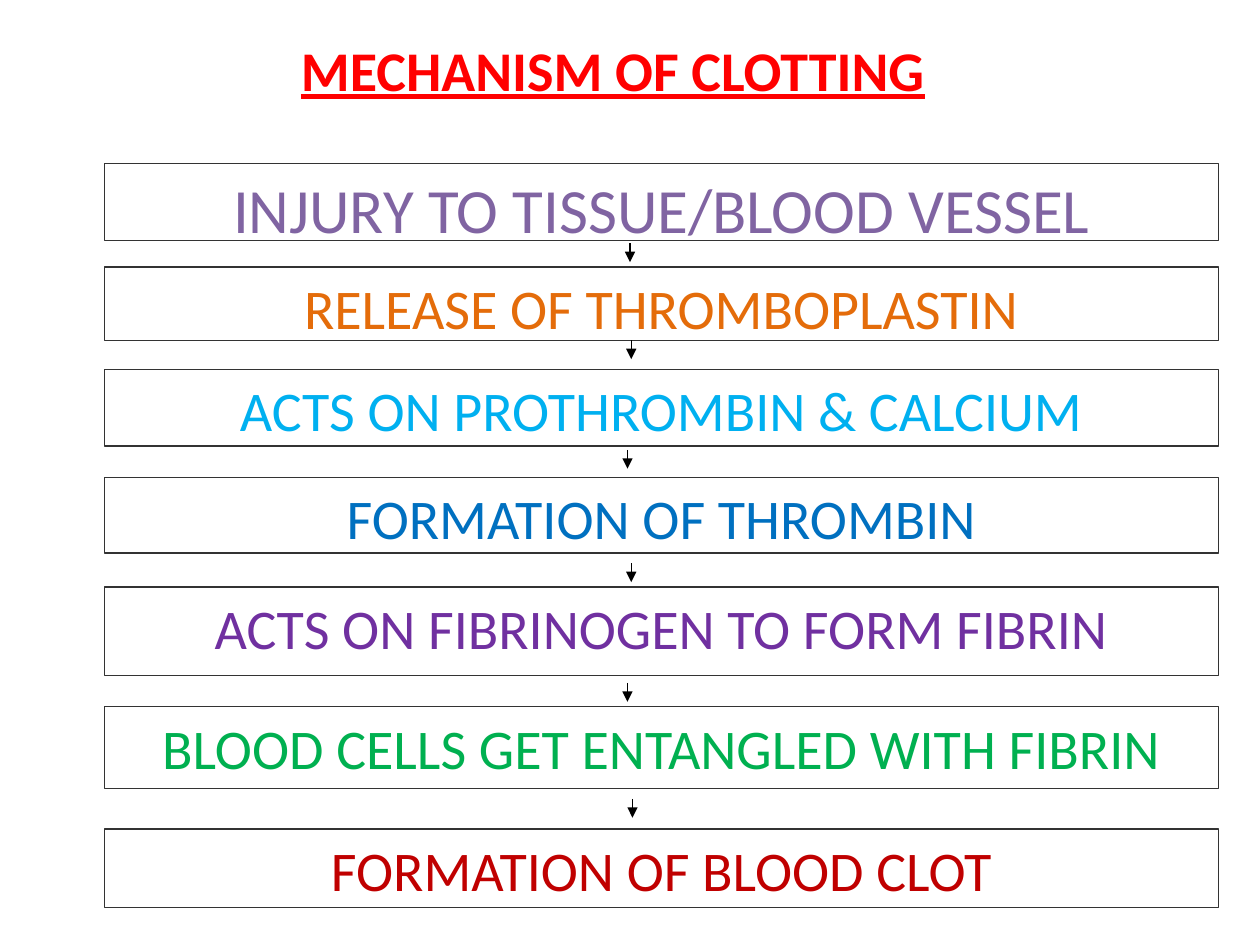
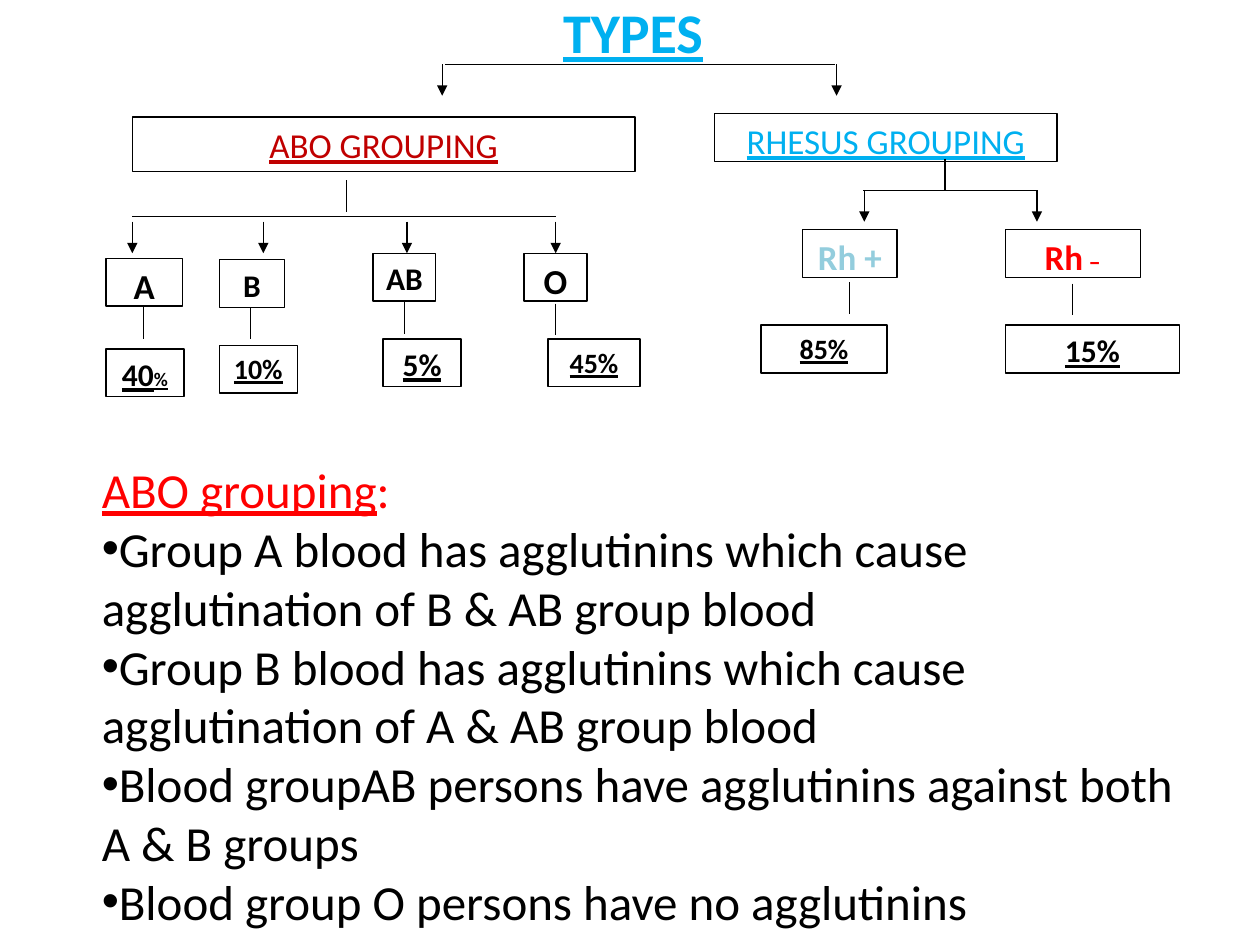
from pptx import Presentation
from pptx.dml.color import RGBColor
from pptx.enum.shapes import MSO_CONNECTOR, MSO_SHAPE
from pptx.enum.text import MSO_ANCHOR, PP_ALIGN
from pptx.oxml.ns import qn
from pptx.util import Inches, Pt
from lxml import etree

RECT = MSO_SHAPE.RECTANGLE
LINE = MSO_CONNECTOR.STRAIGHT
CENTER, LEFT = PP_ALIGN.CENTER, PP_ALIGN.LEFT
TOP, MIDDLE = MSO_ANCHOR.TOP, MSO_ANCHOR.MIDDLE

FONT = "Calibri"
BLACK = RGBColor(0x00, 0x00, 0x00)
WHITE = RGBColor(0xFF, 0xFF, 0xFF)
GREY = RGBColor(0x33, 0x33, 0x33)
RED = RGBColor(0xFF, 0x00, 0x00)
CRIMSON = RGBColor(0xC0, 0x00, 0x00)
ORANGE = RGBColor(0xE4, 0x6C, 0x0A)
GREEN = RGBColor(0x00, 0xB0, 0x50)
SKY = RGBColor(0x00, 0xB0, 0xF0)
BLUE = RGBColor(0x00, 0x70, 0xC0)
PALE = RGBColor(0x93, 0xCD, 0xDD)
MAUVE = RGBColor(0x80, 0x64, 0xA2)
PURPLE = RGBColor(0x70, 0x30, 0xA0)

BOLD = {"bold": True}
UNDER = {"underline": True}
STRONG = {**BOLD, **UNDER}

# Clotting steps: text, colour, size, top, height
STEPS = [
    ("INJURY TO TISSUE/BLOOD VESSEL", MAUVE, 36, 1.3, 0.61),
    ("RELEASE OF THROMBOPLASTIN", ORANGE, 32, 2.12, 0.58),
    ("ACTS ON PROTHROMBIN & CALCIUM", SKY, 32, 2.93, 0.61),
    ("FORMATION OF THROMBIN", BLUE, 32, 3.79, 0.6),
    ("ACTS ON FIBRINOGEN TO FORM FIBRIN", PURPLE, 32, 4.66, 0.7),
    ("BLOOD CELLS GET ENTANGLED WITH FIBRIN", GREEN, 32, 5.61, 0.65),
    ("FORMATION OF BLOOD CLOT", CRIMSON, 32, 6.58, 0.62),
]
# Arrows between the steps: x, top
STEP_ARROWS = [(5, 1.93), (5.01, 2.7), (4.98, 3.57),
               (5.01, 4.47), (4.98, 5.42), (5.02, 6.34)]

# Blood groups: runs of (text, size), colour, left, top, width
GROUPS = [
    ([("A", 20)], BLACK, 0.84, 2.05, 0.61),
    ([("B", 18)], BLACK, 1.74, 2.06, 0.52),
    ([("AB", 18)], BLACK, 2.96, 2.01, 0.5),
    ([("O", 20)], BLACK, 4.16, 2.01, 0.5),
    ([("Rh +", 20)], PALE, 6.37, 1.82, 0.75),
    ([("Rh", 20), (" –", 14)], RED, 7.98, 1.82, 1.07),
]
# Share of each group: runs of (text, size), left, top, width
SHARES = [
    ([("40", 18), ("%", 11)], 0.84, 2.77, 0.62),
    ([("10%", 16)], 1.74, 2.74, 0.62),
    ([("5%", 18)], 3.04, 2.69, 0.62),
    ([("45%", 16)], 4.35, 2.69, 0.73),
    ([("85%", 16)], 6.04, 2.58, 1),
    ([("15%", 18)], 7.98, 2.58, 1.38),
]
BARS = [(3.53, 6.63, 0.51), (1.05, 4.41, 1.72), (6.85, 8.22, 1.51)]
# Vertical lines: x, top
ARROWS = [(3.51, 0.51), (6.64, 0.51), (1.05, 1.76), (2.09, 1.76),
          (3.23, 1.76), (4.41, 1.76), (6.86, 1.51), (8.23, 1.51)]
STEMS = [(2.75, 1.43), (7.5, 1.26), (1.14, 2.44), (1.99, 2.44),
         (3.21, 2.4), (4.41, 2.41), (6.74, 2.24), (8.51, 2.25)]
DROP = 0.25

FACTS = [
    "Group A blood has agglutinins which cause agglutination of B & AB group blood",
    "Group B blood has agglutinins which cause agglutination of A & AB group blood",
    "Blood groupAB persons have agglutinins against both A & B groups",
    "Blood group O persons have no agglutinins",
]


def add_run(para, text, size, color, style):
    run = para.add_run()
    run.text = text
    run.font.color.rgb = color
    for key, value in {"name": FONT, "size": Pt(size), **style}.items():
        setattr(run.font, key, value)


def set_frame(shape, anchor):
    frame = shape.text_frame
    frame.word_wrap = True
    frame.vertical_anchor = anchor
    return frame


def add_box(slide, area, runs, color, style, edge=BLACK):
    """Outlined box with centred runs of (text, size)."""
    box = slide.shapes.add_shape(RECT, *map(Inches, area))
    box.shadow.inherit = False
    box.fill.solid()
    box.fill.fore_color.rgb = WHITE
    box.line.color.rgb = edge
    box.line.width = Pt(0.75)
    para = set_frame(box, TOP).paragraphs[0]
    para.alignment = CENTER
    for text, size in runs:
        add_run(para, text, size, color, style)


def add_text(slide, area, anchor):
    return set_frame(slide.shapes.add_textbox(*map(Inches, area)), anchor)


def add_title(slide, area, text, color, align, anchor):
    para = add_text(slide, area, anchor).paragraphs[0]
    para.alignment = align
    add_run(para, text, 32, color, STRONG)
    return para


def add_line(slide, start, end, arrow=False):
    line = slide.shapes.add_connector(LINE, *map(Inches, (*start, *end)))
    line.line.color.rgb = BLACK
    line.line.width = Pt(0.75)
    if arrow:
        etree.SubElement(line.line._get_or_add_ln(), qn("a:tailEnd"), type="triangle")
    etree.SubElement(line._element.spPr, qn("a:effectLst"))


def add_drops(slide, spots, length, arrow):
    """Vertical lines of one length, each from (x, top)."""
    for x, top in spots:
        add_line(slide, (x, top), (x, top + length), arrow)


def add_bullet(para):
    props = para._p.get_or_add_pPr()
    props.set("marL", "0")
    props.set("indent", "0")
    etree.SubElement(props, qn("a:buFont"), typeface="Arial")
    etree.SubElement(props, qn("a:buChar"), char="•")


def draw_clotting(slide):
    para = add_title(slide, (0.52, 0.15, 7.36, 0.68), "MECHANISM OF CLOTTING", RED, LEFT, TOP)
    para.line_spacing = 1.15
    para._p.get_or_add_pPr().set("marL", str(Inches(1.77)))
    for text, color, size, top, height in STEPS:
        add_box(slide, (0.83, top, 8.84, height), [(text, size)], color, {}, GREY)
    add_drops(slide, STEP_ARROWS, 0.15, True)


def draw_types(slide):
    add_box(slide, (1.05, 0.93, 3.99, 0.43), [("ABO GROUPING", 20)], CRIMSON, UNDER)
    add_box(slide, (5.67, 0.9, 2.72, 0.38), [("RHESUS GROUPING", 20)], SKY, UNDER)
    for runs, color, *spot in GROUPS:
        add_box(slide, (*spot, 0.38), runs, color, BOLD)
    for runs, *spot in SHARES:
        add_box(slide, (*spot, 0.38), runs, BLACK, STRONG)
    for left, right, y in BARS:
        add_line(slide, (left, y), (right, y))
    add_drops(slide, ARROWS, DROP, True)
    add_drops(slide, STEMS, DROP, False)
    add_title(slide, (1.29, -0.07, 7.47, 0.64), "TYPES", SKY, CENTER, MIDDLE)

    frame = add_text(slide, (0.71, 3.58, 8.97, 3.87), MIDDLE)
    head = frame.paragraphs[0]
    add_run(head, "ABO grouping", 28, RED, UNDER)
    add_run(head, ":", 28, RED, {})
    for fact in FACTS:
        para = frame.add_paragraph()
        add_bullet(para)
        add_run(para, fact, 28, BLACK, {})


def main():
    deck = Presentation()
    deck.slide_width, deck.slide_height = Inches(10), Inches(7.5)
    for draw in (draw_clotting, draw_types):
        draw(deck.slides.add_slide(deck.slide_layouts[6]))
    deck.save("out.pptx")


if __name__ == "__main__":
    main()
